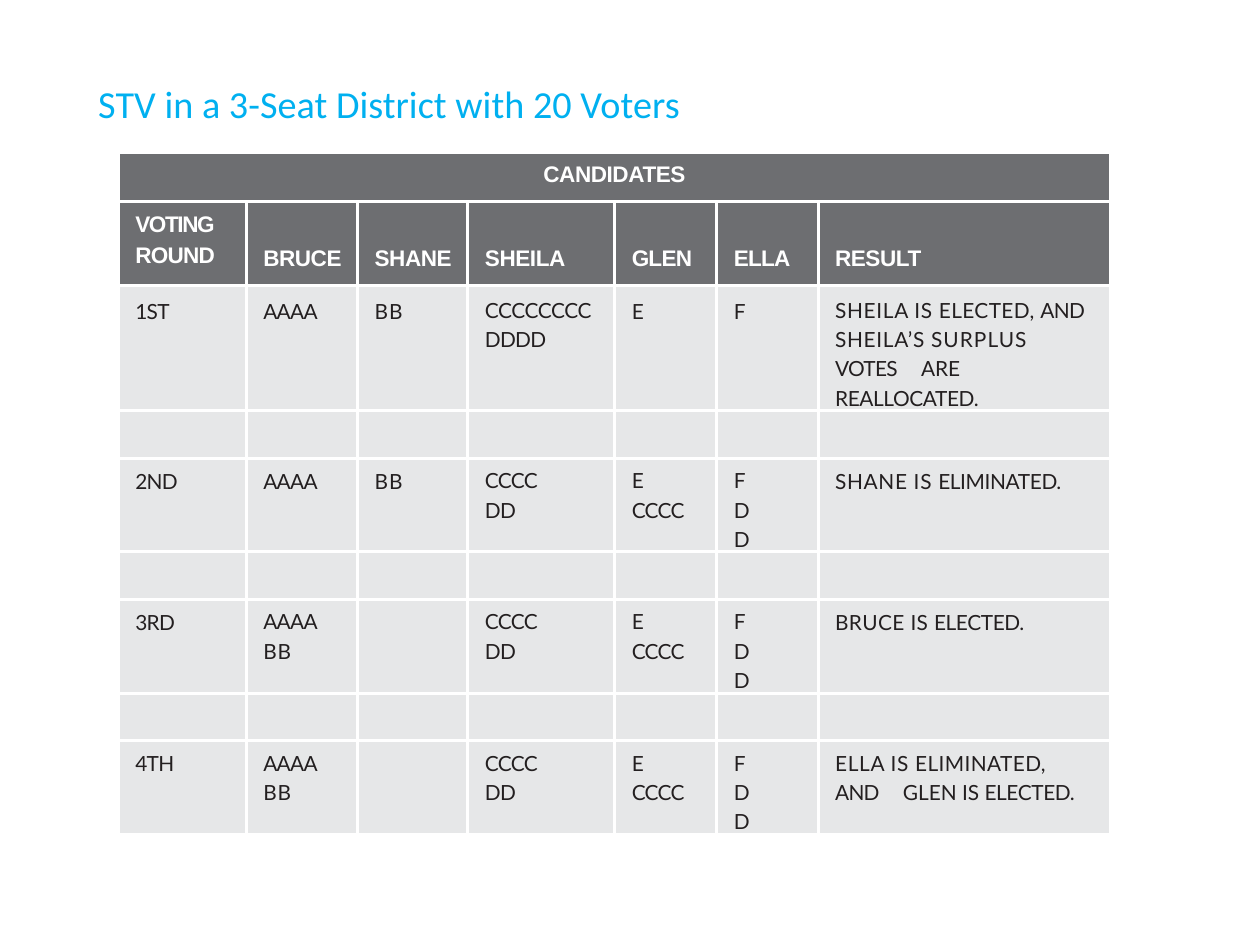
from dataclasses import dataclass
from lxml.etree import SubElement as Sub
from pptx import Presentation as Deck
from pptx.dml.color import RGBColor as Rgb
from pptx.enum.text import PP_ALIGN as Align
from pptx.oxml.ns import qn
from pptx.util import Pt


@dataclass(frozen=True)
class Theme:
    title: str = "00B0F0"
    head: str = "6D6E71"
    body: str = "E6E7E8"
    ink: str = "231F20"
    white: str = "FFFFFF"
    title_size: float = 11
    head_size: float = 6.5
    body_size: float = 6
    title_font: str = "Calibri"
    head_font: str = "Arial"
    body_font: str = "Lato"


THEME = Theme()
INDENT = 4.9
COLS = [36.86, 32.1, 31.8, 42.3, 29.4, 29.2, 84.3]
HEAD_ROWS = [14.3, 24.2]
FIRST_ROW, GAP_ROW, NEXT_ROW = 31.7, 13.7, 22.4

NAMES = [("BRUCE", -0.1), ("SHANE", -0.1), ("SHEILA", -0.1),
         ("GLEN", -0.2), ("ELLA", -0.2), ("RESULT", -0.1)]

BLANK = ([], None)
BRUCE = ([("AAAA", -0.2)], None)
SHANE = ([("BB", 0.3)], None)
BOTH = ([("AAAA", -0.2), (" BB", 0.3)], 10)
SHARED = [
    ([("CCCC DD", -0.2)], 17),
    ([("E ", -0.5), ("CCCC", -0.2)], 7.5),
    ([("F ", -0.5), ("DD", -0.2)], 18.6),
]
WIDE = (" ", 5.2)

ROUNDS = [
    ("1ST", [
        BRUCE, SHANE,
        ([("CCCCCCCC ", -0.1), ("DDDD", -0.2)], 0),
        ([("E", -0.5)], None), ([("F", -0.5)], None),
        ([("SHEILA IS ", 0.2), ("ELECTED, ", 0.1), ("AND ", -0.2),
          ("SHEILA’S ", 0.2), ("SURPLUS ", 0.3), ("VOTES", -0.2), WIDE,
          ("ARE ", 0), ("REALLOCATED.", -0.1)], 6.2)]),
    ("2ND", [
        BRUCE, SHANE, *SHARED,
        ([("SHANE IS ", 0.2), ("ELIMINATED.", -0.1)], None)]),
    ("3RD", [
        BOTH, BLANK, *SHARED,
        ([("BRUCE IS ", 0.1), ("ELECTED.", -0.1)], None)]),
    ("4TH", [
        BOTH, BLANK, *SHARED,
        ([("ELLA IS ", 0.2), ("ELIMINATED, ", 0.1), ("AND", -0.2), WIDE,
          ("GLEN IS ", 0), ("ELECTED.", -0.1)], 6.2)]),
]


def add_run(para, text, font, size, color, bold=False, track=0):
    run = para.add_run()
    run.text = text
    run.font.name = font
    run.font.size = Pt(size)
    run.font.bold = bold
    run.font.color.rgb = Rgb.from_string(color)
    if track:
        run.font._element.set("spc", str(round(track * 100)))


def add_title(slide, box, text):
    frame = slide.shapes.add_textbox(*map(Pt, box)).text_frame
    frame.word_wrap = True
    frame.margin_left = frame.margin_right = frame.margin_bottom = 0
    frame.margin_top = Pt(0.9)
    para = frame.paragraphs[0]
    para.space_before = Pt(0.9)
    para._p.get_or_add_pPr().set("marL", str(Pt(0.9)))
    add_run(para, text, THEME.title_font, THEME.title_size, THEME.title)


def paint(cell, fill, sides):
    props = cell._tc.get_or_add_tcPr()
    for side in sides:
        line = Sub(props, qn(f"a:ln{side}"), w=str(Pt(1)))
        Sub(Sub(line, qn("a:solidFill")), qn("a:srgbClr"), val=THEME.white)
    cell.fill.solid()
    cell.fill.fore_color.rgb = Rgb.from_string(fill)
    cell.margin_left = cell.margin_right = 0
    cell.margin_top = cell.margin_bottom = 0


def write(cell, runs, style, top, right=0, space=None, indent=INDENT):
    para = cell.text_frame.paragraphs[0]
    if not runs:
        Sub(para._p, qn("a:endParaRPr"), sz=str(THEME.body_size * 100))
        return para
    cell.margin_top = Pt(top)
    props = para._p.get_or_add_pPr()
    props.set("marL", str(Pt(indent)))
    props.set("marR", str(Pt(right)))
    if space:
        para.line_spacing = space
    for text, track in runs:
        add_run(para, text, *style, track=track)
    return para


def fill_head(table):
    style = (THEME.head_font, THEME.head_size, THEME.white, True)
    table.cell(0, 0).merge(table.cell(0, len(COLS) - 1))
    para = write(table.cell(0, 0), [("CANDIDATES", -0.1)], style, 2.8, indent=0)
    para.alignment = Align.CENTER
    write(table.cell(1, 0), [("VOTING ", -0.4), ("ROUND", -0.2)], style, 1.5,
          space=1.23)
    for col, name in enumerate(NAMES, 1):
        write(table.cell(1, col), [name], style, 12.7)


def fill_round(table, row, label, cells, top):
    style = (THEME.body_font, THEME.body_size, THEME.ink)
    for col, (runs, right) in enumerate([([(label, -0.2)], None), *cells]):
        cell = table.cell(row, col)
        if right is None:
            write(cell, runs, style, top)
        else:
            write(cell, runs, style, top - 1.4, right, 1.17)


def add_votes(slide, box):
    rows = HEAD_ROWS + [FIRST_ROW] + [GAP_ROW, NEXT_ROW] * (len(ROUNDS) - 1)
    size = (sum(COLS), sum(rows))
    table = slide.shapes.add_table(
        len(rows), len(COLS), *map(Pt, box + size)).table
    table.first_row = table.horz_banding = False
    for col, width in zip(table.columns, COLS):
        col.width = Pt(width)
    for row, (line, height) in enumerate(zip(table.rows, rows)):
        line.height = Pt(height)
        for col, cell in enumerate(line.cells):
            sides = ["L"] * (row > 0 and col > 0)
            sides += ["R"] * (row > 0 and col < len(COLS) - 1)
            sides += ["T"] * (row > 0) + ["B"]
            paint(cell, THEME.head if row < len(HEAD_ROWS) else THEME.body,
                  sides)
    fill_head(table)
    for turn, (label, cells) in enumerate(ROUNDS):
        row = len(HEAD_ROWS) + 2 * turn
        fill_round(table, row, label, cells, 3.1 if turn else 3.8)
        if turn:
            for col in range(len(COLS)):
                write(table.cell(row - 1, col), [], None, 0)


def main():
    deck = Deck()
    deck.slide_width, deck.slide_height = Pt(363), Pt(272.5)
    slide = deck.slides.add_slide(deck.slide_layouts[6])
    add_title(slide, (27.4, 22.3, 184.3, 14.4),
              "STV in a 3-Seat District with 20 Voters")
    add_votes(slide, (34.1, 43.8))
    deck.save("out.pptx")


if __name__ == "__main__":
    main()
